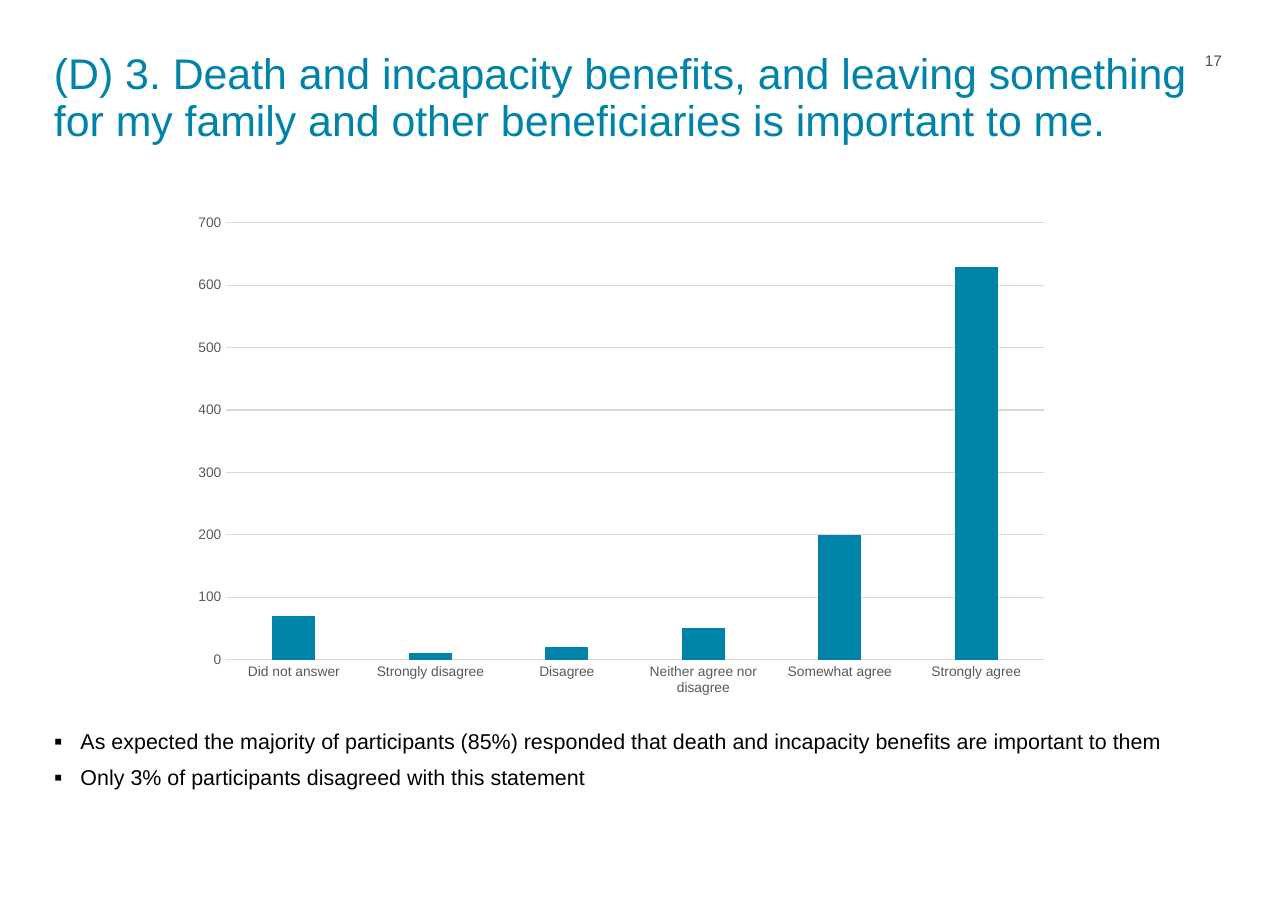
from dataclasses import dataclass

from lxml.etree import SubElement
from pptx import Presentation
from pptx.chart.data import CategoryChartData as ChartData
from pptx.dml.color import RGBColor as Rgb
from pptx.enum.chart import XL_CHART_TYPE as ChartType, XL_TICK_MARK as TickMark
from pptx.enum.text import PP_ALIGN as Align
from pptx.oxml.ns import qn
from pptx.util import Inches, Pt


@dataclass(frozen=True)
class Theme:
    font: str = "Arial"
    accent: str = "0083A9"
    body: str = "000000"
    muted: str = "4D4F53"
    axis: str = "595959"
    grid: str = "D9D9D9"
    title_size: int = 28
    body_size: int = 14
    number_size: int = 10
    axis_size: int = 9
    grid_width: float = 0.75


class SlideBuilder:
    def __init__(self, slide, theme):
        self.slide = slide
        self.theme = theme

    def style(self, font, size, color):
        font.name = self.theme.font
        font.size = Pt(size)
        font.color.rgb = Rgb.from_string(color)

    def frame(self, box):
        frame = self.slide.shapes.add_textbox(*map(Inches, box)).text_frame
        frame.word_wrap = True
        frame.margin_left = frame.margin_right = 0
        frame.margin_top = frame.margin_bottom = 0
        return frame

    def add_words(self, paragraph, words, size, color, spacing):
        paragraph.line_spacing = spacing
        run = paragraph.add_run()
        run.text = words
        self.style(run.font, size, color)

    def text(self, box, words, size, color, align=Align.LEFT):
        paragraph = self.frame(box).paragraphs[0]
        paragraph.alignment = align
        self.add_words(paragraph, words, size, color, 0.9)

    def bullets(self, box, findings):
        frame = self.frame(box)
        for index, finding in enumerate(findings):
            paragraph = frame.add_paragraph() if index else frame.paragraphs[0]
            paragraph.space_before = Pt(6 if index else 0)
            self.add_words(paragraph, finding, self.theme.body_size, self.theme.body, 1.05)
            properties = paragraph._p.get_or_add_pPr()
            properties.set("marL", str(Inches(0.24)))
            properties.set("indent", str(-Inches(0.24)))
            bullet_color = SubElement(properties, qn("a:buClr"))
            SubElement(bullet_color, qn("a:srgbClr"), val=self.theme.body)
            SubElement(properties, qn("a:buSzPct"), val="110000")
            SubElement(properties, qn("a:buFont"), typeface=self.theme.font)
            SubElement(properties, qn("a:buChar"), char="▪")

    def grid_line(self, line):
        line.color.rgb = Rgb.from_string(self.theme.grid)
        line.width = Pt(self.theme.grid_width)

    def columns(self, box, responses):
        data = ChartData()
        data.categories = list(responses)
        data.add_series("Series 1", list(responses.values()))
        chart = self.slide.shapes.add_chart(
            ChartType.COLUMN_CLUSTERED, *map(Inches, box), data
        ).chart
        chart.has_legend = False
        chart.has_title = False
        self.style(chart.font, self.theme.number_size, self.theme.body)

        plot = chart.plots[0]
        plot.vary_by_categories = False
        plot.gap_width = 219
        plot.overlap = -27
        fill = plot.series[0].format.fill
        fill.solid()
        fill.fore_color.rgb = Rgb.from_string(self.theme.accent)

        for axis in (chart.category_axis, chart.value_axis):
            axis.major_tick_mark = axis.minor_tick_mark = TickMark.NONE
            self.style(axis.tick_labels.font, self.theme.axis_size, self.theme.axis)
        self.grid_line(chart.category_axis.format.line)
        scale = chart.value_axis
        scale.minimum_scale, scale.maximum_scale, scale.major_unit = 0, 700, 100
        scale.format.line.fill.background()
        self.grid_line(scale.major_gridlines.format.line)


def main():
    deck = Presentation()
    deck.slide_width, deck.slide_height = Inches(11.69), Inches(8.27)
    theme = Theme()
    page = SlideBuilder(deck.slides.add_slide(deck.slide_layouts[6]), theme)

    page.bullets((0.49, 6.6, 10.51, 1.2), (
        "As expected the majority of participants (85%) responded that death and "
        "incapacity benefits are important to them",
        "Only 3% of participants disagreed with this statement",
    ))
    page.columns((1.64, 1.86, 8, 4.55), {
        "Did not answer": 70,
        "Strongly disagree": 10,
        "Disagree": 20,
        "Neither agree nor disagree": 50,
        "Somewhat agree": 200,
        "Strongly agree": 630,
    })
    page.text(
        (0.49, 0.48, 10.3, 0.83),
        "(D) 3. Death and incapacity benefits, and leaving something for my family "
        "and other beneficiaries is important to me.",
        theme.title_size, theme.accent,
    )
    page.text((10.7, 0.48, 0.39, 0.2), "17", theme.number_size, theme.muted, Align.RIGHT)

    deck.save("out.pptx")


if __name__ == "__main__":
    main()
